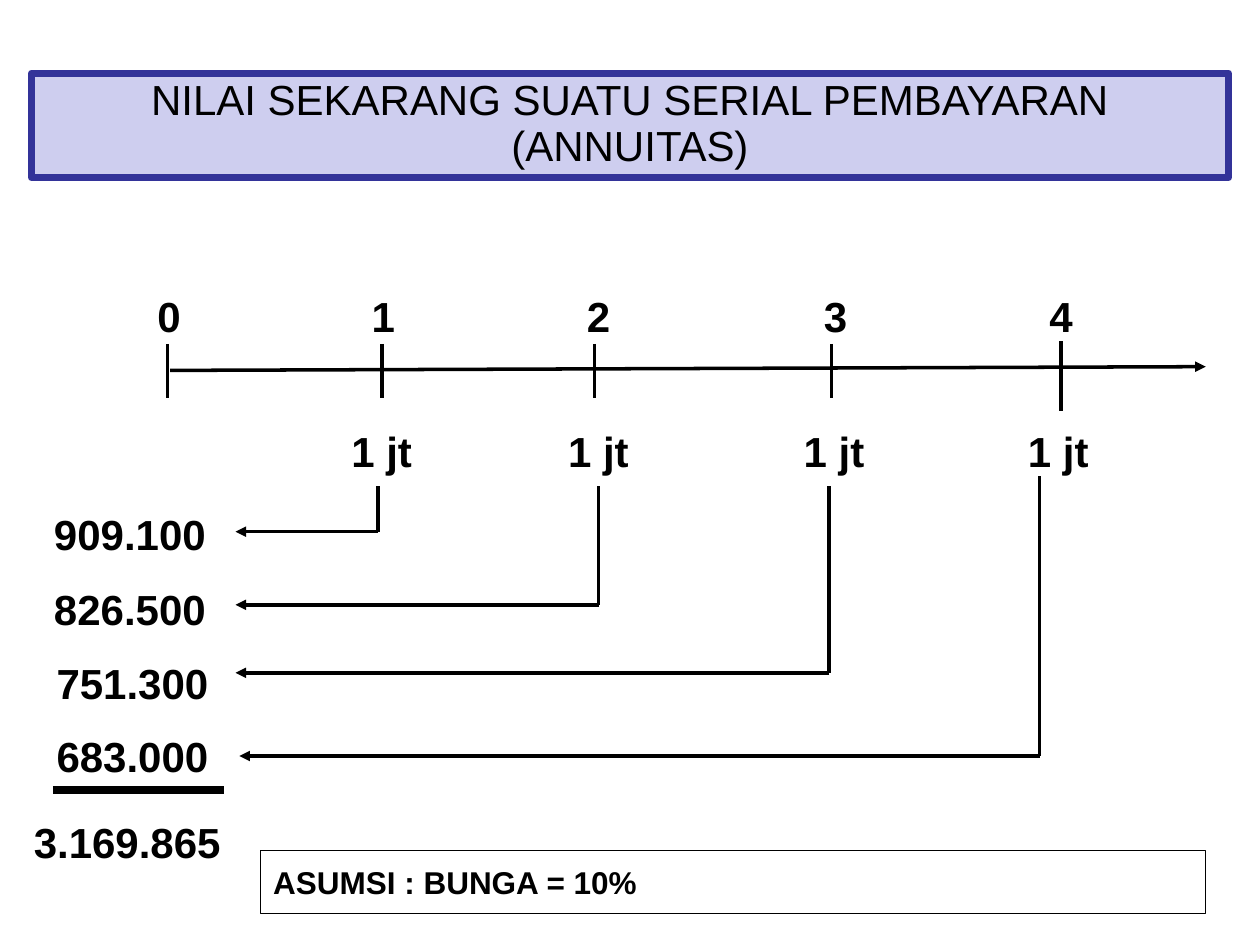
from pptx import Presentation
from pptx.dml.color import RGBColor
from pptx.enum import shapes, text
from pptx.oxml.ns import qn
from pptx.util import Inches, Pt
from lxml import etree

TITLE = "NILAI SEKARANG SUATU SERIAL PEMBAYARAN (ANNUITAS)"
NOTE = "ASUMSI : BUNGA = 10%"
PAY = "1 jt"
TOTAL = "3.169.865"
# year, label left, tick x, tick top, tick bottom
YEARS = [
    ("0", 1.15, 1.33, 2.73, 3.16),
    ("1", 2.85, 3.03, 2.73, 3.16),
    ("2", 4.56, 4.72, 2.73, 3.16),
    ("3", 6.44, 6.6, 2.73, 3.16),
    ("4", 8.23, 8.42, 2.71, 3.26),
]
# present value, its left and top, payment left, drop x, drop top, arrow y, arrow end
FLOWS = [
    ("909.100", 0.33, 3.99, 2.69, 3, 3.86, 4.22, 1.87),
    ("826.500", 0.33, 4.58, 4.41, 4.75, 3.86, 4.8, 1.87),
    ("751.300", 0.35, 5.17, 6.28, 6.58, 3.86, 5.34, 1.87),
    ("683.000", 0.35, 5.75, 8.06, 8.25, 3.78, 6, 1.9),
]

deck = Presentation()
deck.slide_width, deck.slide_height = Inches(10), Inches(7.5)
slide = deck.slides.add_slide(deck.slide_layouts[5])


def paint(form, color):
    """Set a solid colour on a fill or a font's fill."""
    form.solid()
    form.fore_color.rgb = RGBColor.from_string(color)


def write(shape, words, size=24, bold=True, align=text.PP_ALIGN.LEFT):
    frame = shape.text_frame
    frame.text = words
    para = frame.paragraphs[0]
    para.alignment = align
    para.font.name, para.font.size, para.font.bold = "Arial", Pt(size), bold
    paint(para.font.fill, "000000")
    return para


def label(words, left, top, width):
    box = slide.shapes.add_textbox(*map(Inches, (left, top, width, 0.5)))
    box.text_frame.word_wrap = False
    write(box, words)


def rule(x1, y1, x2, y2, width=2, arrow=False):
    line = slide.shapes.add_connector(
        shapes.MSO_CONNECTOR.STRAIGHT, *map(Inches, (x1, y1, x2, y2)))
    paint(line.line.fill, "000000")
    line.line.width = Pt(width)
    if arrow:
        etree.SubElement(line.line._get_or_add_ln(), qn("a:tailEnd"), type="triangle")
    etree.SubElement(line._element.spPr, qn("a:effectLst"))


title = slide.shapes.title
title.left, title.top, title.width, title.height = map(Inches, (0.25, 0.58, 9.5, 0.83))
paint(title.fill, "CECEEF")
paint(title.line.fill, "333399")
title.line.width = Pt(4)
write(title, TITLE, bold=False, align=text.PP_ALIGN.CENTER).line_spacing = 0.9
title.text_frame.vertical_anchor = text.MSO_ANCHOR.TOP
title.text_frame.auto_size = text.MSO_AUTO_SIZE.NONE

rule(1.35, 2.94, 9.57, 2.91, arrow=True)
for year, left, x, top, end in YEARS:
    label(year, left, 2.26, 0.38)
    rule(x, top, x, end)

for value, left, top, pay, x, start, y, end in FLOWS:
    label(PAY, pay, 3.33, 0.68)
    label(value, left, top, 1.42)
    rule(x, start, x, y)
    rule(x, y, end, y, arrow=True)

rule(0.42, 6.27, 1.78, 6.27, width=4.5)
label(TOTAL, 0.17, 6.43, 1.7)

note = slide.shapes.add_shape(
    shapes.MSO_SHAPE.RECTANGLE, *map(Inches, (2.07, 6.75, 7.5, 0.5)))
note.shadow.inherit = False
note.fill.background()
paint(note.line.fill, "000000")
note.line.width = Pt(0.75)
write(note, NOTE, size=18)
note.text_frame.vertical_anchor = text.MSO_ANCHOR.MIDDLE

deck.save("out.pptx")
